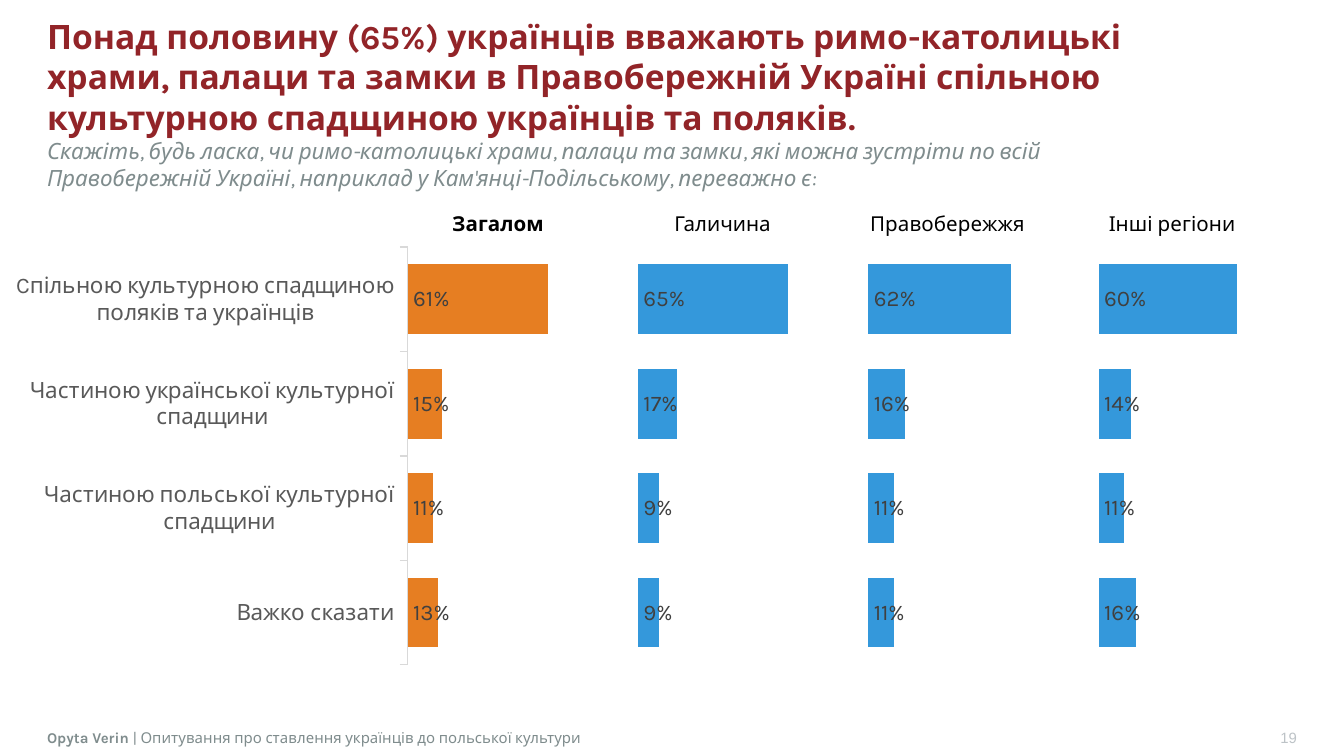
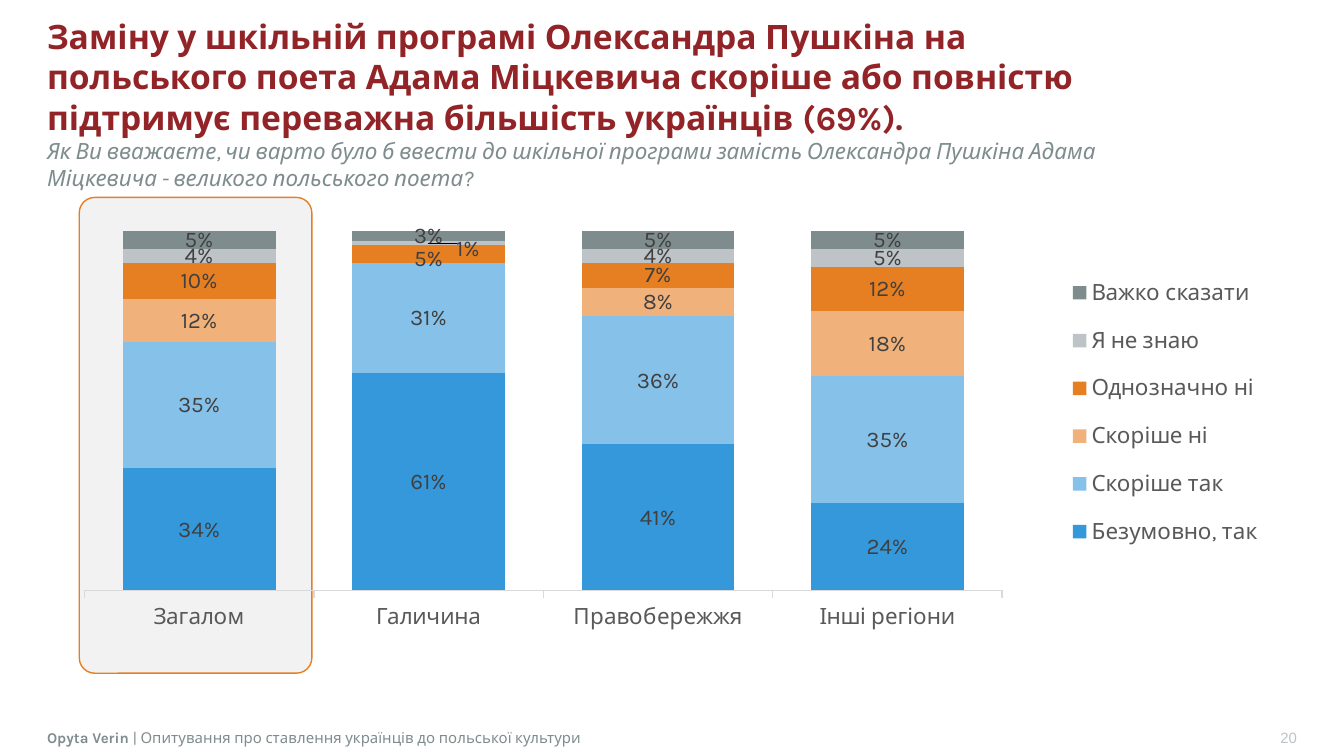
from pptx import Presentation
from pptx.chart.data import CategoryChartData
from pptx.dml.color import RGBColor
from pptx.enum import chart as charts, shapes, text
from pptx.oxml import ns, parse_xml
from pptx.util import Pt

WHITE = RGBColor(0xFF, 0xFF, 0xFF)
BLACK = RGBColor(0, 0, 0)
CRIMSON = RGBColor(0x92, 0x24, 0x28)
SLATE = RGBColor(0x7F, 0x8C, 0x8D)
SILVER = RGBColor(0xBD, 0xC3, 0xC7)
ORANGE = RGBColor(0xE6, 0x7E, 0x22)
PEACH = RGBColor(0xF0, 0xB2, 0x7A)
BLUE = RGBColor(0x34, 0x98, 0xDB)
SKY = RGBColor(0x85, 0xC1, 0xE9)
PALE = RGBColor(0xF2, 0xF2, 0xF2)
AXIS_LINE = RGBColor(0xD9, 0xD9, 0xD9)
AXIS_TEXT = RGBColor(0x59, 0x59, 0x59)
LABEL_TEXT = RGBColor(0x40, 0x40, 0x40)

FONT = "Karla"
MARGIN = 25.2
CHART_LEFT, CHART_WIDTH = 8.64, 703.44
NO_TABLE_STYLE = "{2D5ABB26-0587-4C30-8999-92F81FD0307C}"
REGIONS = ["Загалом", "Галичина", "Правобережжя", "Інші регіони"]


def style_font(font, size, color, bold=None, italic=None, name=FONT):
    font.name = name
    font.size = Pt(size)
    font.color.rgb = color
    font.bold = bold
    font.italic = italic


def add_span(para, words, *style, **options):
    span = para.add_run()
    span.text = words
    style_font(span.font, *style, **options)


def prepare_frame(frame):
    frame.word_wrap = True
    frame.auto_size = text.MSO_AUTO_SIZE.NONE
    frame.vertical_anchor = text.MSO_ANCHOR.MIDDLE
    frame.margin_left = frame.margin_right = frame.margin_top = frame.margin_bottom = 0
    return frame.paragraphs[0]


def add_footer_box(page, left, width):
    box = page.shapes.add_textbox(Pt(left), Pt(389.5), Pt(width), Pt(11.5))
    box.fill.solid()
    box.fill.fore_color.rgb = WHITE
    return prepare_frame(box.text_frame)


def add_page(deck, number, heading, question):
    page = deck.slides.add_slide(deck.slide_layouts[5])
    para = add_footer_box(page, 592.5, 102.3)
    para.alignment = text.PP_ALIGN.RIGHT
    add_span(para, str(number), 8, SILVER, name="Arial")
    para = add_footer_box(page, MARGIN, 555.8)
    add_span(para, "Opyta Verin ", 8, SLATE, bold=True)
    add_span(para, "| Опитування про ставлення українців до польської культури", 8, SLATE)

    title = page.shapes.title
    title.left, title.top, title.width, title.height = Pt(MARGIN), Pt(43.9), Pt(578.2), Pt(23)
    para = prepare_frame(title.text_frame)
    para.alignment = text.PP_ALIGN.LEFT
    add_span(para, heading, 18, CRIMSON, bold=True)
    para.add_line_break()
    add_span(para, question, 12, SLATE, bold=False, italic=True)
    return page


def set_layout(parent, index, x, y, width=None, height=None, inner=False):
    for old in parent.findall(ns.qn("c:layout")):
        parent.remove(old)
    parts = [("layoutTarget", "inner")] if inner else []
    if width:
        parts += [("xMode", "edge"), ("yMode", "edge")]
    parts += [("x", x), ("y", y)]
    if width:
        parts += [("w", width), ("h", height)]
    body = "".join(f'<c:{tag} val="{value}"/>' for tag, value in parts)
    parent.insert(index, parse_xml(
        f'<c:layout {ns.nsdecls("c")}><c:manualLayout>{body}</c:manualLayout></c:layout>'))


def add_stacked_chart(page, kind, top, height, categories, series, plot_area, label_position):
    data = CategoryChartData(number_format="0%")
    data.categories = categories
    for name, values, _ in series:
        data.add_series(name, values)
    chart = page.shapes.add_chart(
        kind, Pt(CHART_LEFT), Pt(top), Pt(CHART_WIDTH), Pt(height), data).chart
    chart.has_title = False
    chart.has_legend = False
    style_font(chart.font, 12, BLACK)

    plot = chart.plots[0]
    plot.gap_width, plot.overlap = 50, 100
    plot.vary_by_categories = False
    for drawn, (_, _, color) in zip(plot.series, series):
        if color is None:
            drawn.format.fill.background()
            continue
        drawn.format.fill.solid()
        drawn.format.fill.fore_color.rgb = color
        labels = drawn.data_labels
        labels.show_value = True
        labels.number_format, labels.number_format_is_linked = "0%", False
        labels.position = label_position
        style_font(labels.font, 12, LABEL_TEXT)

    axis = chart.category_axis
    axis.has_major_gridlines = False
    axis.major_tick_mark = charts.XL_TICK_MARK.OUTSIDE
    axis.format.line.color.rgb = AXIS_LINE
    axis.format.line.width = Pt(0.75)
    style_font(axis.tick_labels.font, 12, AXIS_TEXT)
    values = chart.value_axis
    values.has_major_gridlines = False
    values.minimum_scale, values.maximum_scale = 0, 1
    values.visible = False
    set_layout(chart.plots[0]._element.getparent(), 0, *plot_area, inner=True)
    return chart


def point_label(series, index):
    label = series.points[index].data_label
    style_font(label.font, 12, LABEL_TEXT)
    return next(item for item in series.data_labels._element.findall(ns.qn("c:dLbl"))
                if item.find(ns.qn("c:idx")).get("val") == str(index))


def hide_label(series, index):
    label = point_label(series, index)
    for child in list(label)[1:]:
        label.remove(child)
    label.append(parse_xml(f'<c:delete {ns.nsdecls("c")} val="1"/>'))


def shift_label(series, index, x, y):
    label = point_label(series, index)
    set_layout(label, 1, x, y)
    label.insert(2, parse_xml(
        f'<c:numFmt {ns.nsdecls("c")} formatCode="0%" sourceLinked="0"/>'))


def add_legend(chart, area):
    chart.has_legend = True
    legend = chart.legend
    legend.position = charts.XL_LEGEND_POSITION.RIGHT
    legend.include_in_layout = False
    style_font(legend.font, 12, AXIS_TEXT)
    set_layout(legend._element, 1, *area)


def add_region_header(page):
    frame = page.shapes.add_table(1, len(REGIONS), Pt(206.6), Pt(105.8), Pt(481.6), Pt(29.5))
    table = frame.table
    table.first_row = table.horz_banding = False
    table._tbl.tblPr.find(ns.qn("a:tableStyleId")).text = NO_TABLE_STYLE
    for column, region in enumerate(REGIONS):
        cell = table.cell(0, column)
        cell.fill.background()
        cell.vertical_anchor = text.MSO_ANCHOR.MIDDLE
        cell.margin_left = cell.margin_right = cell.margin_top = cell.margin_bottom = Pt(3.6)
        para = cell.text_frame.paragraphs[0]
        para.alignment = text.PP_ALIGN.CENTER
        add_span(para, region, 11, BLACK, bold=column == 0)


def add_highlight(page):
    box = page.shapes.add_shape(
        shapes.MSO_SHAPE.ROUNDED_RECTANGLE, Pt(42.5), Pt(105.8), Pt(124.6), Pt(254.9))
    box.adjustments[0] = 0.066
    box.shadow.inherit = False
    box.fill.solid()
    box.fill.fore_color.rgb = PALE
    box.line.color.rgb = ORANGE
    box.line.width = Pt(0.75)


def add_heritage_page(deck):
    page = add_page(
        deck, 19,
        "Понад половину (65%) українців вважають римо-католицькі храми, палаци та замки "
        "в Правобережній Україні спільною культурною спадщиною українців та поляків.",
        "Скажіть, будь ласка, чи римо-католицькі храми, палаци та замки, які можна зустріти "
        "по всій Правобережній Україні, наприклад у Кам'янці-Подільському, переважно є:")
    answers = ["Cпільною культурною спадщиною поляків та українців",
               "Частиною української культурної спадщини",
               "Частиною польської культурної спадщини",
               "Важко сказати"]
    shares = [(0.61, 0.15, 0.11, 0.13), (0.65, 0.17, 0.09, 0.09),
              (0.62, 0.16, 0.11, 0.11), (0.60, 0.14, 0.11, 0.16)]
    series = []
    for index, values in enumerate(shares):
        rest = [round(1 - value, 2) for value in values]
        series.append((f"Series {2 * index + 1}", values, BLUE if index else ORANGE))
        series.append((f"Series {2 * index + 2}", rest, None))
    chart = add_stacked_chart(
        page, charts.XL_CHART_TYPE.BAR_STACKED_100, 99.4, 284.4, answers, series,
        (0.298, 0.116, 0.702, 0.787), charts.XL_LABEL_POSITION.INSIDE_BASE)
    chart.category_axis.reverse_order = True
    add_region_header(page)


def add_poet_page(deck):
    page = add_page(
        deck, 20,
        "Заміну у шкільній програмі Олександра Пушкіна на польського поета Адама Міцкевича "
        "скоріше або повністю підтримує переважна більшість українців (69%).",
        "Як Ви вважаєте, чи варто було б ввести до шкільної програми замість Олександра "
        "Пушкіна Адама Міцкевича - великого польського поета?")
    add_highlight(page)
    series = [("Безумовно, так", (0.34, 0.61, 0.41, 0.24), BLUE),
              ("Скоріше так", (0.35, 0.31, 0.36, 0.35), SKY),
              ("Скоріше ні", (0.12, 0, 0.08, 0.18), PEACH),
              ("Однозначно ні", (0.10, 0.05, 0.07, 0.12), ORANGE),
              ("Я не знаю", (0.04, 0.01, 0.04, 0.05), SILVER),
              ("Важко сказати", (0.05, 0.03, 0.05, 0.05), SLATE)]
    chart = add_stacked_chart(
        page, charts.XL_CHART_TYPE.COLUMN_STACKED_100, 95, 289.4, REGIONS, series,
        (0.052, 0.099, 0.699, 0.666), charts.XL_LABEL_POSITION.CENTER)
    add_legend(chart, (0.79, 0.15, 0.17, 0.57))
    drawn = chart.plots[0].series
    hide_label(drawn[2], 1)
    shift_label(drawn[3], 1, 0, 0.01)
    shift_label(drawn[4], 1, 0.03, 0.01)


def main():
    deck = Presentation()
    deck.slide_width, deck.slide_height = Pt(720), Pt(405)
    add_heritage_page(deck)
    add_poet_page(deck)
    deck.save("out.pptx")


if __name__ == "__main__":
    main()
